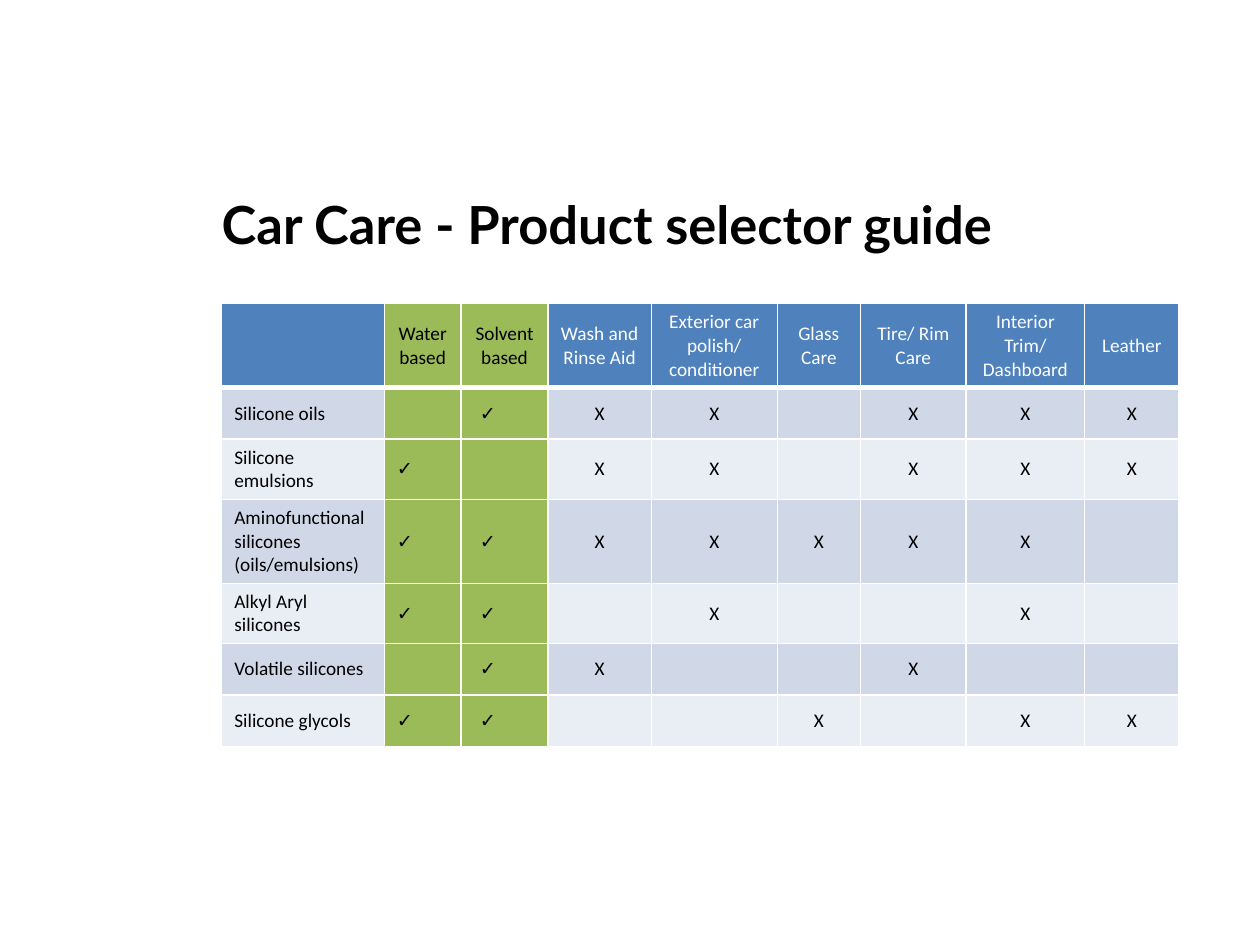
from dataclasses import dataclass
from lxml.etree import SubElement as Sub
from pptx import Presentation as Deck
from pptx.dml.color import RGBColor as Rgb
from pptx.enum.text import MSO_ANCHOR as Anchor, MSO_AUTO_SIZE as Fit, PP_ALIGN as Align
from pptx.oxml.ns import qn
from pptx.util import Inches, Pt


@dataclass(frozen=True)
class Theme:
    ink: str = "000000"
    paper: str = "FFFFFF"
    head: str = "4F81BD"
    base: str = "9BBB59"
    odd: str = "D0D8E8"
    even: str = "E9EDF4"
    big: int = 30
    small: int = 11
    title: str = "Lato"
    body: str = "Calibri"


LOOK = Theme()
WIDTHS = [1.29, 0.61, 0.69, 0.82, 1, 0.66, 0.84, 0.94, 0.75]
HEADS = ["", "Water based", "Solvent based", "Wash and Rinse Aid",
         "Exterior car polish/ conditioner", "Glass Care", "Tire/ Rim Care",
         "Interior Trim/ Dashboard", "Leather"]
MARKS = {
    "Silicone oils": "-✓XX-XXX",
    "Silicone emulsions": "✓-XX-XXX",
    "Aminofunctional silicones (oils/emulsions)": "✓✓XXXXX-",
    "Alkyl Aryl silicones": "✓✓-X--X-",
    "Volatile silicones": "-✓X--X--",
    "Silicone glycols": "✓✓--X-XX",
}


def style(part, form):
    for key, val in form.items():
        setattr(part, key, val)


def write(para, text, face, size, tint, bold=False):
    run = para.add_run()
    run.text = text
    style(run.font, {"name": face, "size": Pt(size), "bold": bold})
    run.font.color.rgb = Rgb.from_string(tint)


def edge(cell, foot):
    props = cell._tc.get_or_add_tcPr()
    for side, wide in {"L": 1, "R": 1, "T": 1, "B": foot}.items():
        line = Sub(props, qn(f"a:ln{side}"), w=str(Pt(wide)))
        Sub(Sub(line, qn("a:solidFill")), qn("a:srgbClr"), val=LOOK.paper)


def add_title(slide, box, text):
    title = slide.shapes.title
    style(title, dict(zip(("left", "top", "width", "height"), map(Inches, box))))
    frame = title.text_frame
    style(frame, {"margin_left": 0, "margin_top": 0, "margin_right": 0,
                  "margin_bottom": 0, "word_wrap": True, "auto_size": Fit.NONE,
                  "vertical_anchor": Anchor.TOP})
    para = frame.paragraphs[0]
    para.alignment = Align.LEFT
    write(para, text, LOOK.title, LOOK.big, LOOK.ink, True)


def fill_cell(cell, row, col, text):
    edge(cell, 1 if row else 3)
    band = LOOK.odd if row % 2 else LOOK.even
    tint = LOOK.base if col in (1, 2) else band if row else LOOK.head
    cell.fill.solid()
    cell.fill.fore_color.rgb = Rgb.from_string(tint)
    check = text == "✓"
    style(cell, {"vertical_anchor": Anchor.MIDDLE,
                 "margin_left": Inches(0.15 if check and col == 2 else 0.1)})
    if text:
        para = cell.text_frame.paragraphs[0]
        para.alignment = Align.LEFT if check or col == 0 else Align.CENTER
        ink = LOOK.ink if row or col in (1, 2) else LOOK.paper
        write(para, text, LOOK.body, LOOK.small, ink)


def add_guide(slide, box):
    rows = [HEADS] + [[name, *marks.replace("-", " ")] for name, marks in MARKS.items()]
    table = slide.shapes.add_table(len(rows), len(HEADS), *map(Inches, box)).table
    for col, wide in zip(table.columns, WIDTHS):
        col.width = Inches(wide)
    for r, texts in enumerate(rows):
        table.rows[r].height = Inches(0.41)
        for c, text in enumerate(texts):
            fill_cell(table.cell(r, c), r, c, text.strip())


def main():
    deck = Deck()
    style(deck, {"slide_width": Inches(10), "slide_height": Inches(7.5)})
    slide = deck.slides.add_slide(deck.slide_layouts[5])
    add_title(slide, (1.76, 1.52, 7.58, 0.89), "Car Care - Product selector guide")
    add_guide(slide, (1.76, 2.41, 7.6, 2.87))
    deck.save("out.pptx")


if __name__ == "__main__":
    main()
